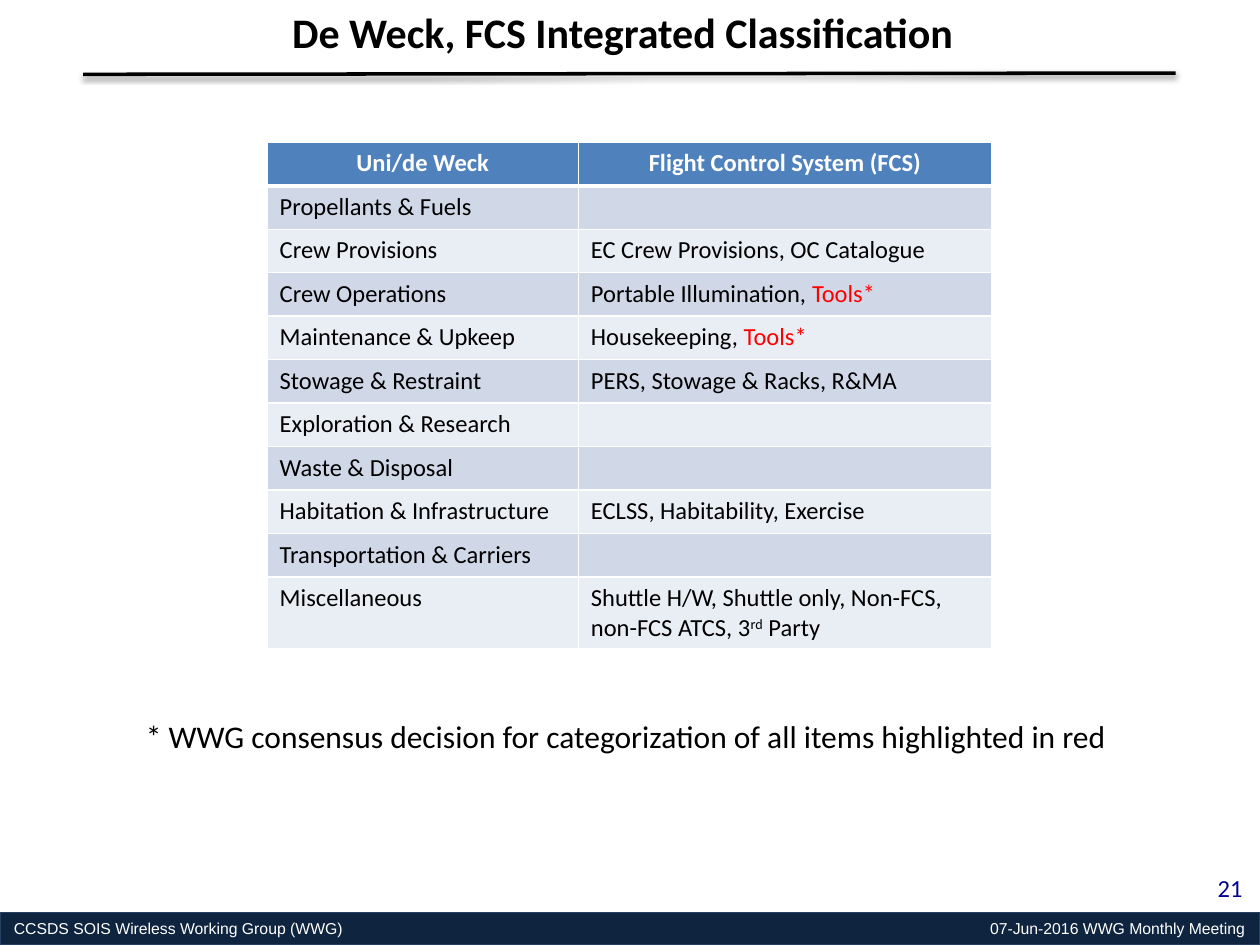
from lxml import etree
from pptx import Presentation
from pptx.dml.color import RGBColor
from pptx.enum.shapes import MSO_CONNECTOR, MSO_SHAPE
from pptx.enum.text import MSO_ANCHOR, PP_ALIGN
from pptx.oxml.ns import qn
from pptx.util import Inches, Pt

COLORS = {
    "black": "000000", "white": "FFFFFF", "red": "FF0000", "number": "000090",
    "footer": "0F243E", "footer_line": "254061",
    "header": "4F81BD", "band_dark": "D0D8E8", "band_light": "E9EDF4",
}
TITLE = "De Weck, FCS Integrated Classification"
NOTE = "* WWG consensus decision for categorization of all items highlighted in red"
FOOTER = ("CCSDS SOIS Wireless Working Group (WWG)", "07-Jun-2016 WWG Monthly Meeting")
PAGE_NUMBER = "21"
HEADERS = ("Uni/de Weck", "Flight Control System (FCS)")
TOOLS = ("Tools*", {"color": "red"})
ROWS = [
    ("Propellants & Fuels", []),
    ("Crew Provisions", [("EC Crew Provisions, OC Catalogue", {})]),
    ("Crew Operations", [("Portable Illumination, ", {}), TOOLS]),
    ("Maintenance & Upkeep", [("Housekeeping, ", {}), TOOLS]),
    ("Stowage & Restraint", [("PERS, Stowage & Racks, R&MA", {})]),
    ("Exploration & Research", []),
    ("Waste & Disposal", []),
    ("Habitation & Infrastructure", [("ECLSS, Habitability, Exercise", {})]),
    ("Transportation & Carriers", []),
    ("Miscellaneous", [("Shuttle H/W, Shuttle only, Non-FCS, non-FCS ATCS, 3", {}),
                       ("rd", {"baseline": 30}), (" Party", {})]),
]
TABLE_LEFT, TABLE_TOP, TABLE_HEIGHT = 2.12, 1.13, 4.01
COLUMN_WIDTHS = (2.47, 3.28)
LAST_ROW_HEIGHT = 0.56
ROW_HEIGHT = (TABLE_HEIGHT - LAST_ROW_HEIGHT) / len(ROWS)


def rgb(name):
    return RGBColor.from_string(COLORS[name])


def add_run(paragraph, text, size, color="black", bold=False, font="Calibri", baseline=0):
    run = paragraph.add_run()
    run.text = text
    run.font.size = Pt(size)
    run.font.name = font
    run.font.bold = bold
    run.font.color.rgb = rgb(color)
    if baseline:
        run.font._element.set("baseline", str(baseline * 1000))


def add_label(slide, box, text, size, color="black", bold=False, align=PP_ALIGN.LEFT, wrap=False):
    frame = slide.shapes.add_textbox(*map(Inches, box)).text_frame
    frame.word_wrap = wrap
    paragraph = frame.paragraphs[0]
    paragraph.alignment = align
    add_run(paragraph, text, size, color, bold)


def add_color(parent, color):
    return etree.SubElement(parent, qn("a:srgbClr"), val=COLORS[color])


def add_footer(slide):
    bar = slide.shapes.add_shape(MSO_SHAPE.RECTANGLE, *map(Inches, (0, 7.24, 10, 0.26)))
    bar.shadow.inherit = False
    bar.fill.solid()
    bar.fill.fore_color.rgb = rgb("footer")
    bar.line.color.rgb = rgb("footer_line")
    bar.line.width = Pt(0.75)
    frame = bar.text_frame
    frame.margin_left = frame.margin_right = Inches(0.11)
    frame.margin_top = frame.margin_bottom = Inches(0.06)
    frame.vertical_anchor = MSO_ANCHOR.MIDDLE
    paragraph = frame.paragraphs[0]
    paragraph.alignment = PP_ALIGN.LEFT
    tabs = etree.SubElement(paragraph._p.get_or_add_pPr(), qn("a:tabLst"))
    etree.SubElement(tabs, qn("a:tab"), pos=str(Inches(9.77)), algn="r")
    add_run(paragraph, "\t".join(FOOTER), 9, "white", font="Arial")


def add_title_rule(slide):
    rule = slide.shapes.add_connector(
        MSO_CONNECTOR.STRAIGHT, *map(Inches, (0.66, 0.59, 9.33, 0.58)))
    rule.line.color.rgb = rgb("black")
    rule.line.width = Pt(2)
    effects = etree.SubElement(rule._element.spPr, qn("a:effectLst"))
    shadow = etree.SubElement(effects, qn("a:outerShdw"), blurRad=str(Pt(3.1)),
                              dist=str(Pt(1.6)), dir=str(90 * 60000), rotWithShape="0")
    etree.SubElement(add_color(shadow, "black"), qn("a:alpha"), val="38000")


def style_cell(cell, fill, bottom_width):
    cell.fill.solid()
    cell.fill.fore_color.rgb = rgb(fill)
    properties = cell._tc.get_or_add_tcPr()
    widths = {"lnL": 1, "lnR": 1, "lnT": 1, "lnB": bottom_width}
    for position, (side, width) in enumerate(widths.items()):
        border = etree.Element(qn(f"a:{side}"), w=str(Pt(width)))
        add_color(etree.SubElement(border, qn("a:solidFill")), "white")
        properties.insert(position, border)


def add_table(slide):
    table = slide.shapes.add_table(
        len(ROWS) + 1, len(HEADERS), Inches(TABLE_LEFT), Inches(TABLE_TOP),
        Inches(sum(COLUMN_WIDTHS)), Inches(TABLE_HEIGHT)).table
    for column, width in zip(table.columns, COLUMN_WIDTHS):
        column.width = Inches(width)
    for row in table.rows:
        row.height = Inches(ROW_HEIGHT)
    table.rows[len(ROWS)].height = Inches(LAST_ROW_HEIGHT)

    for column, text in enumerate(HEADERS):
        cell = table.cell(0, column)
        style_cell(cell, "header", 3)
        paragraph = cell.text_frame.paragraphs[0]
        paragraph.alignment = PP_ALIGN.CENTER
        add_run(paragraph, text, 14, "white", bold=True)

    for index, (category, systems) in enumerate(ROWS, start=1):
        for column, runs in enumerate(([(category, {})], systems)):
            cell = table.cell(index, column)
            style_cell(cell, "band_dark" if index % 2 else "band_light", 1)
            paragraph = cell.text_frame.paragraphs[0]
            for text, style in runs:
                add_run(paragraph, text, 14, **style)
            if not runs:
                etree.SubElement(paragraph._p, qn("a:endParaRPr"), sz="1400")


def main():
    presentation = Presentation()
    presentation.slide_width, presentation.slide_height = Inches(10), Inches(7.5)
    slide = presentation.slides.add_slide(presentation.slide_layouts[6])
    add_footer(slide)
    add_label(slide, (9.3, 6.88, 0.66, 0.35), PAGE_NUMBER, 14, "number",
              align=PP_ALIGN.RIGHT, wrap=True)
    add_label(slide, (2.22, 0, 5.54, 0.5), TITLE, 24, bold=True)
    add_title_rule(slide)
    add_table(slide)
    add_label(slide, (1.06, 5.64, 7.88, 0.4), NOTE, 18)
    presentation.save("out.pptx")


if __name__ == "__main__":
    main()
